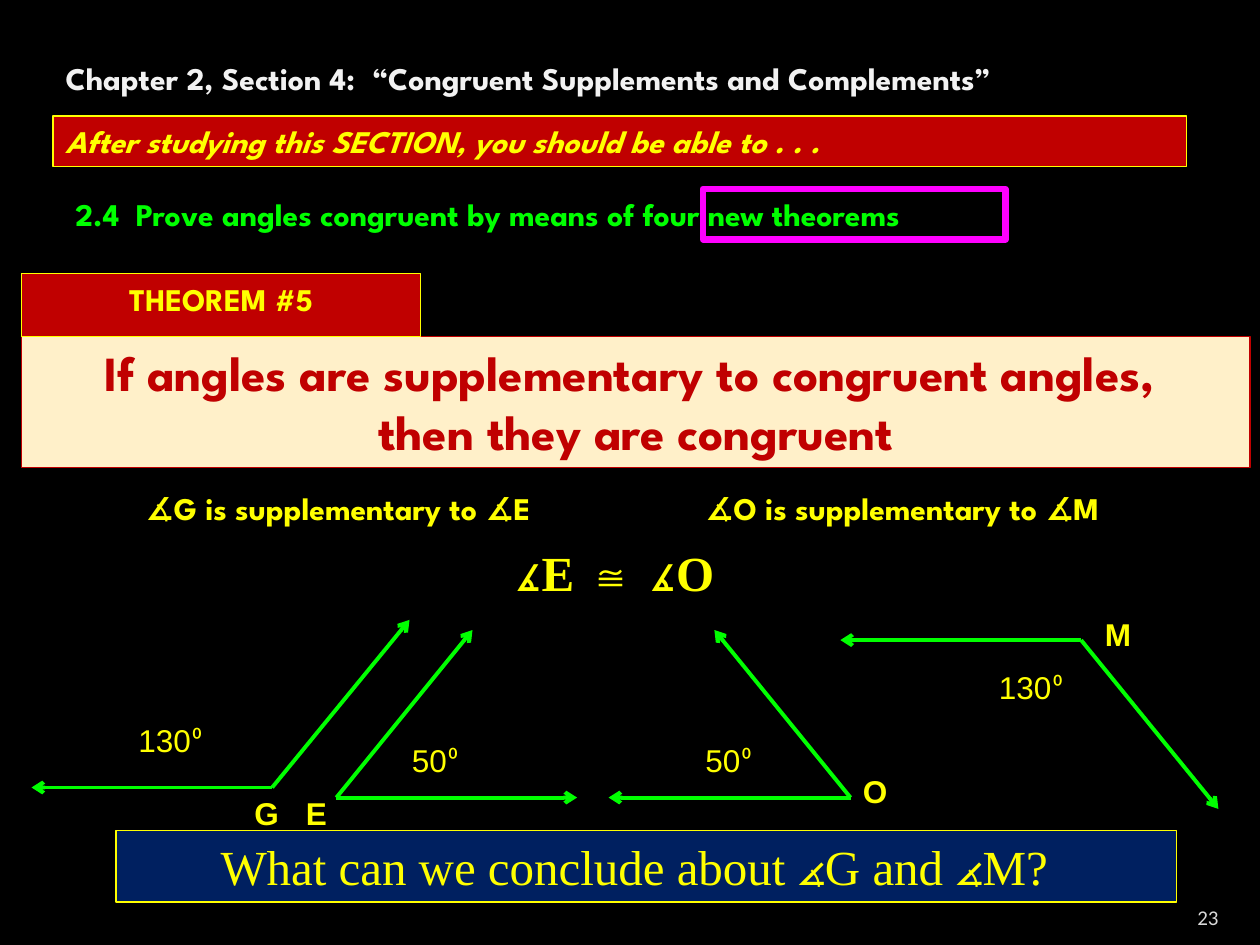
from pptx import Presentation, util as u
from pptx.dml.color import RGBColor
from pptx.enum import shapes as sh, text as tx
from pptx.oxml.ns import qn
from lxml import etree

BLACK, RED, CREAM, NAVY = "000000", "C00000", "FFF0C9", "002060"
YELLOW, GREEN, PINK = "FFFF00", "00FF00", "FF00FF"
HEAD, SERIF, SANS, DEGREE = "League Spartan", "Times New Roman", "Arial", "Calibri"
LEFT, MID, RIGHT = tx.PP_ALIGN.LEFT, tx.PP_ALIGN.CENTER, tx.PP_ALIGN.RIGHT

# Content: text, box (left, top, width, height), format
TITLE = "Chapter 2, Section 4:  “Congruent Supplements and Complements”"
BANNERS = [
    ("After studying this SECTION, you should be able to . . .",
     (0.42, 0.92, 9, 0.4), dict(fill=RED, line=YELLOW, italic=True)),
    (["If angles are supplementary to congruent angles, ", "then they are congruent"],
     (0.17, 2.67, 9.75, 1.04),
     dict(fill=CREAM, line=RED, color=RED, size=28, align=MID)),
    ("THEOREM #5", (0.17, 2.17, 3.17, 0.5), dict(fill=RED, line=YELLOW, align=MID)),
    ("What can we conclude about ∡G and ∡M?", (0.92, 6.59, 8.42, 0.57),
     dict(fill=NAVY, line=YELLOW, font=SERIF, size=28, bold=False, align=MID, pad=0.29)),
]
NOTES = [
    ("2.4  Prove angles congruent by means of four new theorems",
     (0.5, 1.5, 9, 0.4), dict(color=GREEN)),
    ("∡G is supplementary to ∡E", (0.83, 3.83, 3.83, 0.4), dict(align=MID, pad=0.22)),
    ("∡O is supplementary to ∡M", (5.5, 3.83, 4.25, 0.4), {}),
    ([[("∡E ", SERIF), ("≅ ", SANS), ("∡O", SERIF)]], (3.75, 4.26, 2.25, 0.57),
     dict(size=28, align=MID)),
    ("23", (8.97, 7.08, 0.8, 0.3),
     dict(font=DEGREE, size=12, color="D9D9D9", bold=False, align=RIGHT,
          anchor=tx.MSO_ANCHOR.BOTTOM, foot=0)),
]
# Angles: name, name place, vertex, ray ends, degrees, degree place
ANGLES = [
    ("G", (1.92, 6.25), (2.16, 6.25), [(3.25, 4.92), (0.25, 6.25)], "130", (1, 5.67)),
    ("E", (2.33, 6.25), (2.67, 6.33), [(3.75, 5), (4.58, 6.33)], "50", (3.17, 5.83)),
    ("O", (6.75, 6.08), (6.75, 6.33), [(5.67, 5), (4.83, 6.33)], "50", (5.5, 5.83)),
    ("M", (8.67, 4.83), (8.58, 5.08), [(9.67, 6.42), (6.67, 5.08)], "130", (7.83, 5.25)),
]
LABEL = (0.75, 0.4)


def rgb(code):
    return RGBColor.from_string(code)


def inch(nums):
    return [u.Inches(n) for n in nums]


def write(shape, body, font=HEAD, size=18, color=YELLOW, bold=True, italic=False,
          align=LEFT, anchor=tx.MSO_ANCHOR.TOP, pad=0.1, foot=0.05):
    """Fill a shape with lines; a line is a string or a list of (text, font)."""
    frame = shape.text_frame
    frame.word_wrap = True
    frame.auto_size = tx.MSO_AUTO_SIZE.NONE
    frame.vertical_anchor = anchor
    frame.margin_right, frame.margin_bottom = inch((pad, foot))
    lines = [body] if isinstance(body, str) else body
    for i, line in enumerate(lines):
        para = frame.add_paragraph() if i else frame.paragraphs[0]
        para.alignment = align
        for part, face in [(line, font)] if isinstance(line, str) else line:
            run = para.add_run()
            run.text = part
            run.font.name, run.font.size = face, u.Pt(size)
            run.font.bold, run.font.italic = bold, italic
            run.font.color.rgb = rgb(color)


def panel(box, fill=None, line=None, width=0.75):
    shape = slide.shapes.add_shape(sh.MSO_SHAPE.RECTANGLE, *inch(box))
    shape.shadow.inherit = False
    if fill:
        shape.fill.solid()
        shape.fill.fore_color.rgb = rgb(fill)
    else:
        shape.fill.background()
    if line:
        shape.line.color.rgb = rgb(line)
        shape.line.width = u.Pt(width)
    else:
        shape.line.fill.background()
    return shape


def note(body, box, **look):
    write(slide.shapes.add_textbox(*inch(box)), body, **look)


def ray(start, end):
    line = slide.shapes.add_connector(sh.MSO_CONNECTOR.STRAIGHT, *inch(start + end))
    line.line.color.rgb = rgb(GREEN)
    line.line.width = u.Pt(2.25)
    props = line._element.spPr
    etree.SubElement(props.find(qn("a:ln")), qn("a:tailEnd"), type="arrow")
    etree.SubElement(props, qn("a:effectLst"))


deck = Presentation()
deck.slide_width, deck.slide_height = inch((10, 7.5))
slide = deck.slides.add_slide(deck.slide_layouts[5])
slide.background.fill.solid()
slide.background.fill.fore_color.rgb = rgb(BLACK)

# Title
title = slide.shapes.title
title.left, title.top, title.width, title.height = inch((0.42, 0.42, 9, 0.4))
write(title, TITLE, color="F2F2F2")

# Banners and statements
for body, box, look in BANNERS:
    shape = panel(box, look.pop("fill"), look.pop("line"))
    write(shape, body, **look)
for body, box, look in NOTES:
    note(body, box, **look)

# Frame around the key words
panel((5.58, 1.5, 2.4, 0.4), line=PINK, width=3.78)

# Angles with their names and sizes
for name, spot, vertex, ends, size, place in ANGLES:
    for end in ends:
        ray(vertex, end)
    note(name, spot + LABEL, font=SANS)
    write(panel(place + LABEL, BLACK), [[(size, SANS), ("⁰", DEGREE)]], bold=False)

deck.save("out.pptx")
